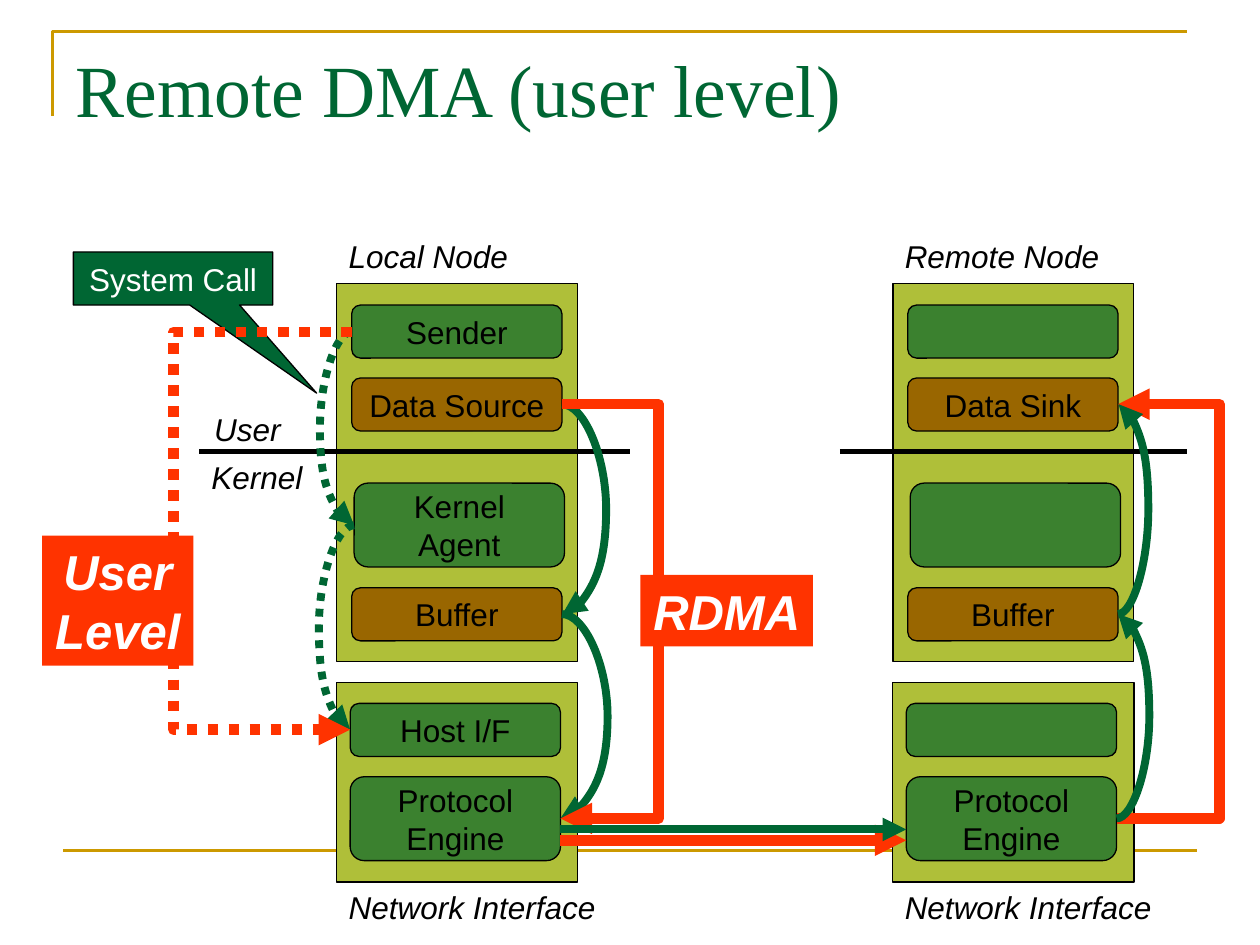
from lxml import etree
from pptx import Presentation
from pptx.dml.color import RGBColor
from pptx.enum.dml import MSO_LINE
from pptx.enum.shapes import MSO_CONNECTOR, MSO_SHAPE
from pptx.enum.text import MSO_ANCHOR, PP_ALIGN
from pptx.oxml.ns import qn
from pptx.util import Cm, Pt

RECT, ROUND = MSO_SHAPE.RECTANGLE, MSO_SHAPE.ROUNDED_RECTANGLE
CALLOUT = MSO_SHAPE.RECTANGULAR_CALLOUT
STRAIGHT, ELBOW, CURVE = MSO_CONNECTOR.STRAIGHT, MSO_CONNECTOR.ELBOW, MSO_CONNECTOR.CURVE
DOTTED = MSO_LINE.ROUND_DOT
LEFT, CENTER, RIGHT = PP_ALIGN.LEFT, PP_ALIGN.CENTER, PP_ALIGN.RIGHT
TOP, MIDDLE = MSO_ANCHOR.TOP, MSO_ANCHOR.MIDDLE

DARK_GREEN, GREEN, OLIVE = "006633", "3B812F", "AFBF39"
BROWN, GOLD, RED = "996600", "CC9900", "FF3300"
BLACK, WHITE = "000000", "FFFFFF"

BOX_W, LOW, TALL = 4.24, 1.07, 1.69
# (offset from node left, top, height, fill)
BOXES = [
    (0.31, 6.15, LOW, GREEN),
    (0.31, 7.62, LOW, BROWN),
    (0.36, 9.74, TALL, GREEN),
    (0.31, 11.85, LOW, BROWN),
    (0.28, 14.18, LOW, GREEN),
    (0.28, 15.66, TALL, GREEN),
]
SENDER_Y, DATA_Y, AGENT_Y, BUFFER_Y, HOST_Y, ENGINE_Y = (
    round(top + height / 2, 2) for _, top, height, _ in BOXES)
NODES = [
    (6.78, "Local Node", 3.73,
     ["Sender", "Data Source", "Kernel\nAgent", "Buffer", "Host I/F", "Protocol\nEngine"]),
    (17.99, "Remote Node", 4.42,
     ["", "Data Sink", "", "Buffer", "", "Protocol\nEngine"]),
]


def rgb(color):
    return RGBColor.from_string(color)


def write(tf, text, size=18, font="Arial", color=BLACK, bold=False, italic=False,
          align=CENTER, anchor=MIDDLE, wrap=False):
    tf.word_wrap = wrap
    tf.vertical_anchor = anchor
    for i, line in enumerate(text.split("\n")):
        p = tf.add_paragraph() if i else tf.paragraphs[0]
        p.alignment = align
        r = p.add_run()
        r.text = line
        r.font.size, r.font.name = Pt(size), font
        r.font.bold, r.font.italic = bold, italic
        r.font.color.rgb = rgb(color)


class Deck:
    def __init__(self):
        self.prs = Presentation()
        self.prs.slide_width, self.prs.slide_height = Cm(25.4), Cm(19.05)
        self.s = self.prs.slides.add_slide(self.prs.slide_layouts[5])

    def title(self, text, x, y, w, h):
        sp = self.s.shapes.title
        sp.left, sp.top, sp.width, sp.height = Cm(x), Cm(y), Cm(w), Cm(h)
        write(sp.text_frame, text, size=42, font="Times New Roman", color=DARK_GREEN,
              align=LEFT, anchor=TOP, wrap=True)

    def shape(self, kind, x, y, w, h, fill, text="", outline=True, **fmt):
        sp = self.s.shapes.add_shape(kind, Cm(x), Cm(y), Cm(w), Cm(h))
        sp.shadow.inherit = False
        sp.fill.solid()
        sp.fill.fore_color.rgb = rgb(fill)
        if outline:
            sp.line.color.rgb = rgb(BLACK)
            sp.line.width = Pt(0.75)
        else:
            sp.line.fill.background()
        if text:
            write(sp.text_frame, text, **fmt)
        return sp

    def label(self, text, x, y, w, align=LEFT):
        sp = self.s.shapes.add_textbox(Cm(x), Cm(y), Cm(w), Cm(1.02))
        write(sp.text_frame, text, italic=True, align=align, anchor=TOP)

    def corner(self, x, y, w, h, color):
        """Open two-sided frame at the top left."""
        fb = self.s.shapes.build_freeform(Cm(x), Cm(y + h))
        fb.add_line_segments([(Cm(x), Cm(y)), (Cm(x + w), Cm(y))], close=False)
        sp = fb.convert_to_shape()
        sp.shadow.inherit = False
        sp.fill.background()
        sp.line.color.rgb = rgb(color)
        sp.line.width = Pt(1.5)

    def line(self, x1, y1, x2, y2, color, width, kind=STRAIGHT, via=None, dash=None,
             arrow=False):
        """Connector; a bent or curved one swings out to x = via."""
        c = self.s.shapes.add_connector(kind, Cm(x1), Cm(y1), Cm(x2), Cm(y2))
        c.line.color.rgb = rgb(color)
        c.line.width = Pt(width)
        if dash:
            c.line.dash_style = dash
        sp_pr = c._element.spPr
        if arrow:
            etree.SubElement(sp_pr.find(qn("a:ln")), qn("a:tailEnd"), type="triangle")
        etree.SubElement(sp_pr, qn("a:effectLst"))
        if via is not None:
            geom = sp_pr.find(qn("a:prstGeom"))
            guides = geom.find(qn("a:avLst"))
            if guides is None:
                guides = etree.SubElement(geom, qn("a:avLst"))
            ratio = round((via - x1) / (x2 - x1) * 100000)
            etree.SubElement(guides, qn("a:gd"), name="adj1", fmla=f"val {ratio}")

    def node(self, x, name, name_w, texts):
        self.shape(RECT, x + 0.01, 5.72, 4.85, 7.62, OLIVE)
        self.shape(RECT, x, 13.76, 4.87, 4.02, OLIVE)
        for (dx, top, height, fill), text in zip(BOXES, texts):
            self.shape(ROUND, x + dx, top, BOX_W, height, fill, text)
        self.label(name, x, 4.65, name_w)
        self.label("Network Interface", x, 17.78, 5.49)


def main():
    d = Deck()
    d.corner(1.06, 0.64, 22.86, 1.7, GOLD)
    d.line(1.27, 17.15, 24.13, 17.15, GOLD, 1.5)
    d.title("Remote DMA (user level)", 1.27, 0.76, 22.86, 3.18)

    for node in NODES:
        d.node(*node)
    for x1, x2 in [(4.02, 12.7), (16.93, 23.92)]:
        d.line(x1, 9.1, x2, 9.1, BLACK, 3)
    d.label("User", 4.06, 8.15, 1.85, RIGHT)
    d.label("Kernel", 4.01, 9.1, 2.34, RIGHT)

    green = dict(color=DARK_GREEN, width=4.5, arrow=True)
    red = dict(color=RED, width=6, arrow=True)

    d.line(11.33, DATA_Y, 11.34, BUFFER_Y, kind=CURVE, via=12.22, **green)
    d.line(11.33, BUFFER_Y, 11.3, ENGINE_Y, kind=CURVE, via=12.25, **green)
    d.line(7.09, SENDER_Y, 7.14, AGENT_Y, kind=CURVE, via=6.45, dash=DOTTED, **green)
    d.line(7.14, AGENT_Y, 7.06, HOST_Y, kind=CURVE, via=6.43, dash=DOTTED, **green)

    d.line(11.33, DATA_Y, 11.3, ENGINE_Y, kind=ELBOW, via=13.28, **red)
    d.line(11.28, 16.94, 18.27, 16.94, **red)
    d.line(22.51, ENGINE_Y, 22.54, DATA_Y, kind=ELBOW, via=24.58, **red)

    callout = d.shape(CALLOUT, 1.48, 5.08, 4.02, LOW, DARK_GREEN, "System Call",
                      color=WHITE, wrap=True)
    callout.adjustments[0], callout.adjustments[1] = 0.72, 2.16

    d.line(22.51, ENGINE_Y, 22.54, BUFFER_Y, kind=CURVE, via=23.17, **green)
    d.line(22.54, BUFFER_Y, 22.55, DATA_Y, kind=CURVE, via=23.15, **green)
    d.line(11.28, 16.72, 18.27, 16.72, **green)

    banner = dict(outline=False, size=28, color=WHITE, bold=True, italic=True)
    d.shape(RECT, 12.91, 11.59, 3.48, 1.44, RED, "RDMA", **banner)
    d.line(7.09, SENDER_Y, 7.06, HOST_Y, kind=ELBOW, via=3.5, dash=DOTTED, **red)
    d.shape(RECT, 0.85, 10.8, 3.05, 2.62, RED, "User\nLevel", **banner)

    d.prs.save("out.pptx")


if __name__ == "__main__":
    main()
